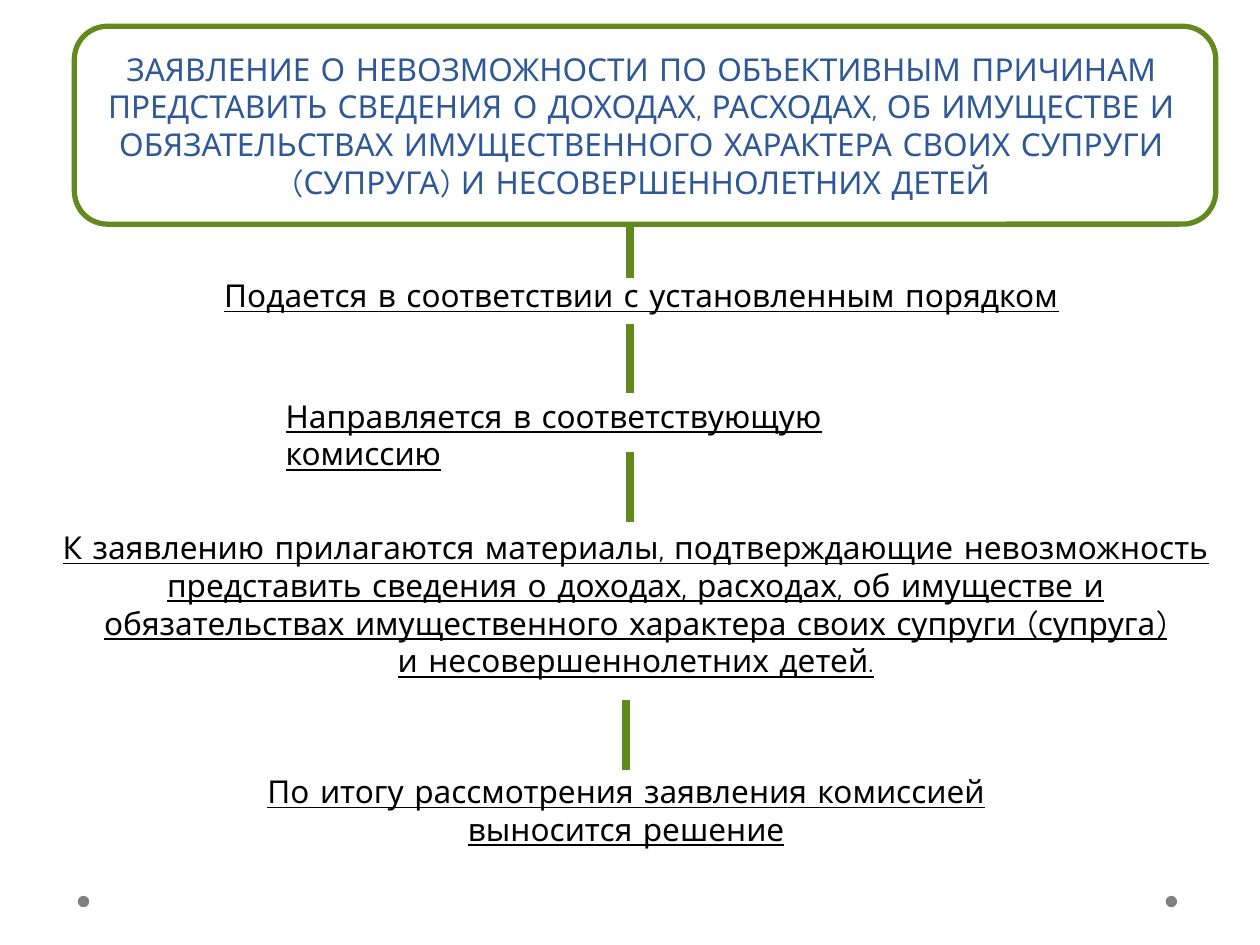
from dataclasses import dataclass

from lxml.etree import SubElement
from pptx import Presentation
from pptx.dml.color import RGBColor
from pptx.enum.shapes import MSO_CONNECTOR as Connector, MSO_SHAPE as Shape
from pptx.enum.text import MSO_ANCHOR as Anchor, MSO_AUTO_SIZE as AutoSize, PP_ALIGN as Align
from pptx.oxml.ns import qn
from pptx.util import Cm, Pt


@dataclass(frozen=True)
class Theme:
    font: str = "Comic Neue"
    text_size: Pt = Pt(18)
    box_line: Pt = Pt(3)
    link_line: Pt = Pt(4.5)
    heading: RGBColor = RGBColor(0x2F, 0x58, 0x97)
    text: RGBColor = RGBColor(0, 0, 0)
    white: RGBColor = RGBColor(0xFF, 0xFF, 0xFF)
    box_green: RGBColor = RGBColor(0x63, 0x89, 0x1F)
    link_green: RGBColor = RGBColor(0x62, 0x89, 0x1C)
    dot: RGBColor = RGBColor(0x80, 0x80, 0x80)


theme = Theme()


def write_text(shape, paragraphs, align, color, underline, anchor):
    frame = shape.text_frame
    for name, value in {"word_wrap": True, "auto_size": AutoSize.NONE,
                        "vertical_anchor": anchor}.items():
        setattr(frame, name, value)
    font_format = {"name": theme.font, "size": theme.text_size, "underline": underline}
    for index, text in enumerate(paragraphs):
        paragraph = frame.add_paragraph() if index else frame.paragraphs[0]
        paragraph.alignment = align
        run = paragraph.add_run()
        run.text = text
        for name, value in font_format.items():
            setattr(run.font, name, value)
        run.font.color.rgb = color


def add_filled_shape(kind, left, top, width, height, fill):
    shape = slide.shapes.add_shape(kind, Cm(left), Cm(top), Cm(width), Cm(height))
    shape.shadow.inherit = False
    shape.fill.solid()
    shape.fill.fore_color.rgb = fill
    return shape


presentation = Presentation()
presentation.slide_width, presentation.slide_height = Cm(25.4), Cm(19.05)
slide = presentation.slides.add_slide(presentation.slide_layouts[5])

# Heading in its rounded frame
title = slide.shapes.title
title.left, title.top, title.width, title.height = Cm(1.5), Cm(0.53), Cm(22.86), Cm(3.99)
write_text(
    title,
    ["ЗАЯВЛЕНИЕ О НЕВОЗМОЖНОСТИ ПО ОБЪЕКТИВНЫМ ПРИЧИНАМ ПРЕДСТАВИТЬ СВЕДЕНИЯ "
     "О ДОХОДАХ, РАСХОДАХ, ОБ ИМУЩЕСТВЕ И ОБЯЗАТЕЛЬСТВАХ ИМУЩЕСТВЕННОГО ХАРАКТЕРА "
     "СВОИХ СУПРУГИ (СУПРУГА) И НЕСОВЕРШЕННОЛЕТНИХ ДЕТЕЙ"],
    Align.CENTER, theme.heading, False, Anchor.MIDDLE)

heading_frame = add_filled_shape(Shape.ROUNDED_RECTANGLE, 1.5, 0.53, 23.01, 3.99, theme.white)
heading_frame.line.color.rgb = theme.box_green
heading_frame.line.width = theme.box_line
title.element.addprevious(heading_frame.element)

# Corner dots
for left in (23.5, 1.57):
    dot = add_filled_shape(Shape.OVAL, left, 18.06, 0.23, 0.23, theme.dot)
    dot.line.fill.background()
    heading_frame.element.addprevious(dot.element)

# Links between the steps: x, top, bottom
for x, top, bottom in [(12.7, 4.52, 5.61), (12.7, 6.53, 7.92),
                       (12.7, 9.12, 10.52), (12.62, 14.12, 15.52)]:
    link = slide.shapes.add_connector(Connector.STRAIGHT, Cm(x), Cm(top), Cm(x), Cm(bottom))
    link.line.color.rgb = theme.link_green
    link.line.width = theme.link_line
    SubElement(link.element.spPr, qn("a:effectLst"))

# Steps: left, top, width, height, alignment, paragraphs
steps = [
    (1.5, 5.44, 22.86, 1.02, Align.CENTER,
     ["Подается в соответствии с установленным порядком"]),
    (0.71, 10.52, 24.21, 3.4, Align.CENTER,
     ["К заявлению прилагаются материалы, подтверждающие невозможность представить "
      "сведения о доходах, расходах, об имуществе и обязательствах имущественного "
      "характера своих супруги (супруга)",
      "и несовершеннолетних детей."]),
    (5.51, 7.87, 14.58, 1.02, Align.LEFT,
     ["Направляется в соответствующую комиссию"]),
    (4.93, 15.44, 15.39, 1.8, Align.CENTER,
     ["По итогу рассмотрения заявления комиссией выносится решение"]),
]
for left, top, width, height, align, paragraphs in steps:
    step = slide.shapes.add_textbox(Cm(left), Cm(top), Cm(width), Cm(height))
    write_text(step, paragraphs, align, theme.text, True, Anchor.TOP)

presentation.save("out.pptx")
